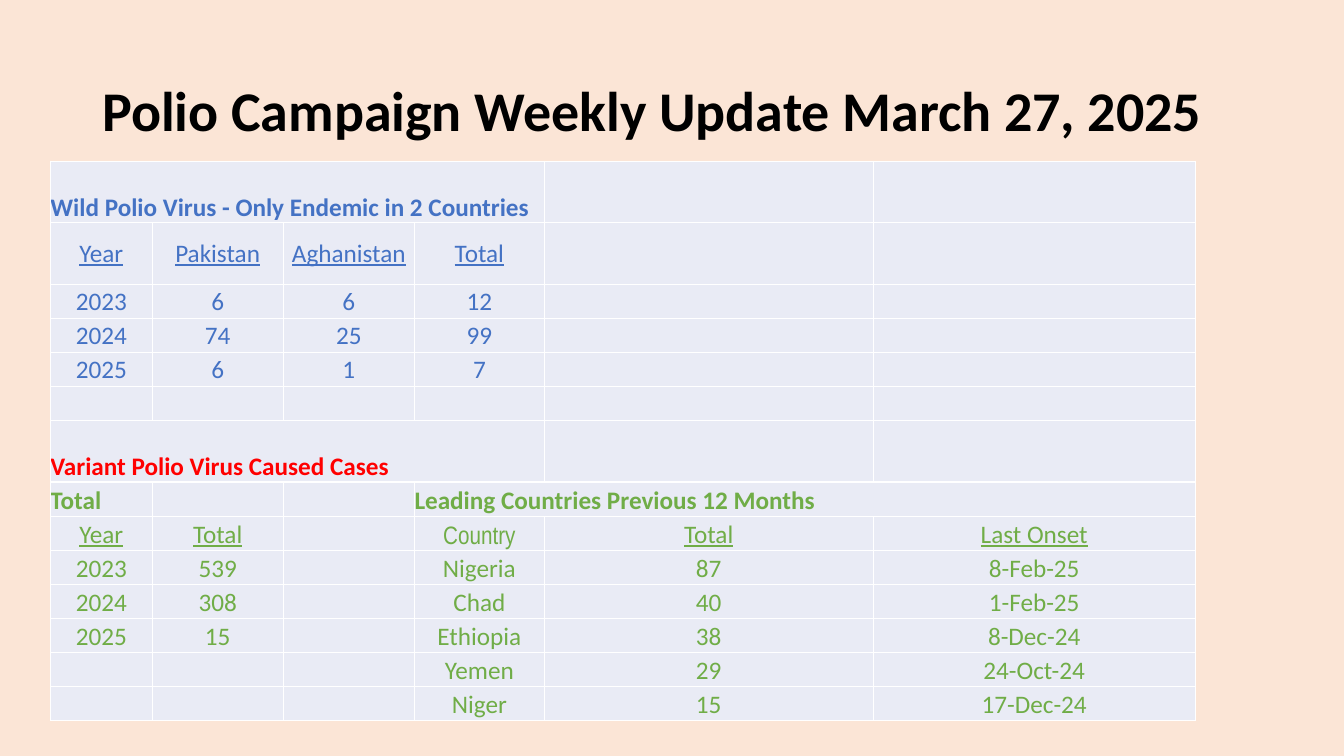
"""Build the weekly polio update slide with its case table."""
from dataclasses import dataclass

from lxml.etree import SubElement
from pptx import Presentation
from pptx.dml.color import RGBColor
from pptx.enum.text import MSO_ANCHOR, PP_ALIGN
from pptx.oxml import parse_xml
from pptx.oxml.ns import nsdecls, qn
from pptx.slide import Slide
from pptx.table import Table, _Cell
from pptx.text.text import _Paragraph
from pptx.util import Pt

PEACH = RGBColor(0xFB, 0xE5, 0xD6)
PALE = RGBColor(0xE9, 0xEB, 0xF5)
WHITE = RGBColor(0xFF, 0xFF, 0xFF)
BLACK = RGBColor(0x00, 0x00, 0x00)
BLUE = RGBColor(0x44, 0x72, 0xC4)
RED = RGBColor(0xFF, 0x00, 0x00)
GREEN = RGBColor(0x70, 0xAD, 0x47)

COLUMNS = (72.7, 93.6, 93.8, 92.7, 234.9, 230.2)
TALL, SHORT = 44, 24.3
TALL_ROWS = (0, 1, 6)
ROWS = [TALL if i in TALL_ROWS else SHORT for i in range(14)]

TEXT = {"name": "Calibri", "size": Pt(18), "bold": False, "underline": False}
HEADING = {**TEXT, "bold": True}
HEADER = {**TEXT, "underline": True}
NARROW = {**TEXT, "name": "Arial Narrow"}
TITLE = {**HEADING, "size": Pt(40)}


@dataclass
class Block:
    """Rows of text that share a colour and a format."""

    row: int
    col: int
    color: RGBColor
    lines: list[tuple[str, ...]]
    fmt: dict
    align: PP_ALIGN = PP_ALIGN.CENTER
    anchor: MSO_ANCHOR = MSO_ANCHOR.BOTTOM
    span: int = 1


def heading(row: int, col: int, color: RGBColor, text: str, span: int = 1) -> Block:
    """Describe a bold, left-aligned heading."""
    return Block(row, col, color, [(text,)], HEADING, PP_ALIGN.LEFT, span=span)


BLOCKS = [
    heading(0, 0, BLUE, "Wild Polio Virus - Only Endemic in 2 Countries", 4),
    Block(1, 0, BLUE, [("Year", "Pakistan", "Aghanistan", "Total")], HEADER,
          anchor=MSO_ANCHOR.MIDDLE),
    Block(2, 0, BLUE, [
        ("2023", "6", "6", "12"),
        ("2024", "74", "25", "99"),
        ("2025", "6", "1", "7"),
    ], TEXT, anchor=MSO_ANCHOR.MIDDLE),
    heading(6, 0, RED, "Variant Polio Virus Caused Cases", 4),
    heading(7, 0, GREEN, "Total"),
    heading(7, 3, GREEN, "Leading Countries Previous 12 Months", 3),
    Block(8, 0, GREEN, [("Year", "Total")], HEADER),
    Block(8, 3, GREEN, [("Country",)], NARROW),
    Block(8, 4, GREEN, [("Total", "Last Onset")], HEADER),
    Block(9, 0, GREEN, [("2023", "539"), ("2024", "308"), ("2025", "15")], TEXT),
    Block(9, 3, GREEN, [
        ("Nigeria", "87", "8-Feb-25"),
        ("Chad", "40", "1-Feb-25"),
        ("Ethiopia", "38", "8-Dec-24"),
        ("Yemen", "29", "24-Oct-24"),
        ("Niger", "15", "17-Dec-24"),
    ], TEXT),
]


def add_run(p: _Paragraph, text: str, color: RGBColor, fmt: dict) -> None:
    """Add one formatted run to a paragraph."""
    r = p.add_run()
    r.text = text
    r.font.color.rgb = color
    for name, value in fmt.items():
        setattr(r.font, name, value)


def style_cell(cell: _Cell) -> None:
    """Give a cell its fill, white borders and zero margins."""
    for side in ("left", "right", "top", "bottom"):
        setattr(cell, f"margin_{side}", Pt(0))
    cell.fill.solid()
    cell.fill.fore_color.rgb = PALE
    for i, side in enumerate("LRTB"):
        ln = parse_xml(f'<a:ln{side} {nsdecls("a")} w="{Pt(1)}"/>')
        fill = SubElement(ln, qn("a:solidFill"))
        SubElement(fill, qn("a:srgbClr"), val=str(WHITE))
        cell._tc.get_or_add_tcPr().insert(i, ln)


def draw_block(table: Table, block: Block) -> None:
    """Write a block of text into the table."""
    for i, line in enumerate(block.lines, block.row):
        for j, text in enumerate(line, block.col):
            cell = table.cell(i, j)
            if block.span > 1:
                cell.merge(table.cell(i, j + block.span - 1))
            cell.vertical_anchor = block.anchor
            p = cell.text_frame.paragraphs[0]
            p.alignment = block.align
            add_run(p, text, block.color, block.fmt)


def draw_title(s: Slide) -> None:
    """Add the slide title."""
    sp = s.shapes.add_textbox(Pt(66), Pt(28.8), Pt(828), Pt(104.4))
    tf = sp.text_frame
    tf.word_wrap = True
    tf.vertical_anchor = MSO_ANCHOR.MIDDLE
    p = tf.paragraphs[0]
    p.line_spacing = 0.9
    add_run(p, "Polio Campaign Weekly Update March 27, 2025", BLACK, TITLE)


def draw_table(s: Slide) -> None:
    """Add the table of cases."""
    table = s.shapes.add_table(len(ROWS), len(COLUMNS), Pt(36), Pt(115.2),
                               Pt(sum(COLUMNS)), Pt(sum(ROWS))).table
    table.first_row = table.horz_banding = False
    for column, width in zip(table.columns, COLUMNS):
        column.width = Pt(width)
    for row, height in zip(table.rows, ROWS):
        row.height = Pt(height)
    for cell in table.iter_cells():
        style_cell(cell)
    for block in BLOCKS:
        draw_block(table, block)


def main() -> None:
    """Create and save the presentation."""
    prs = Presentation()
    prs.slide_width, prs.slide_height = Pt(960), Pt(540)
    s = prs.slides.add_slide(prs.slide_layouts[6])
    s.background.fill.solid()
    s.background.fill.fore_color.rgb = PEACH
    draw_title(s)
    draw_table(s)
    prs.save("out.pptx")


if __name__ == "__main__":
    main()
